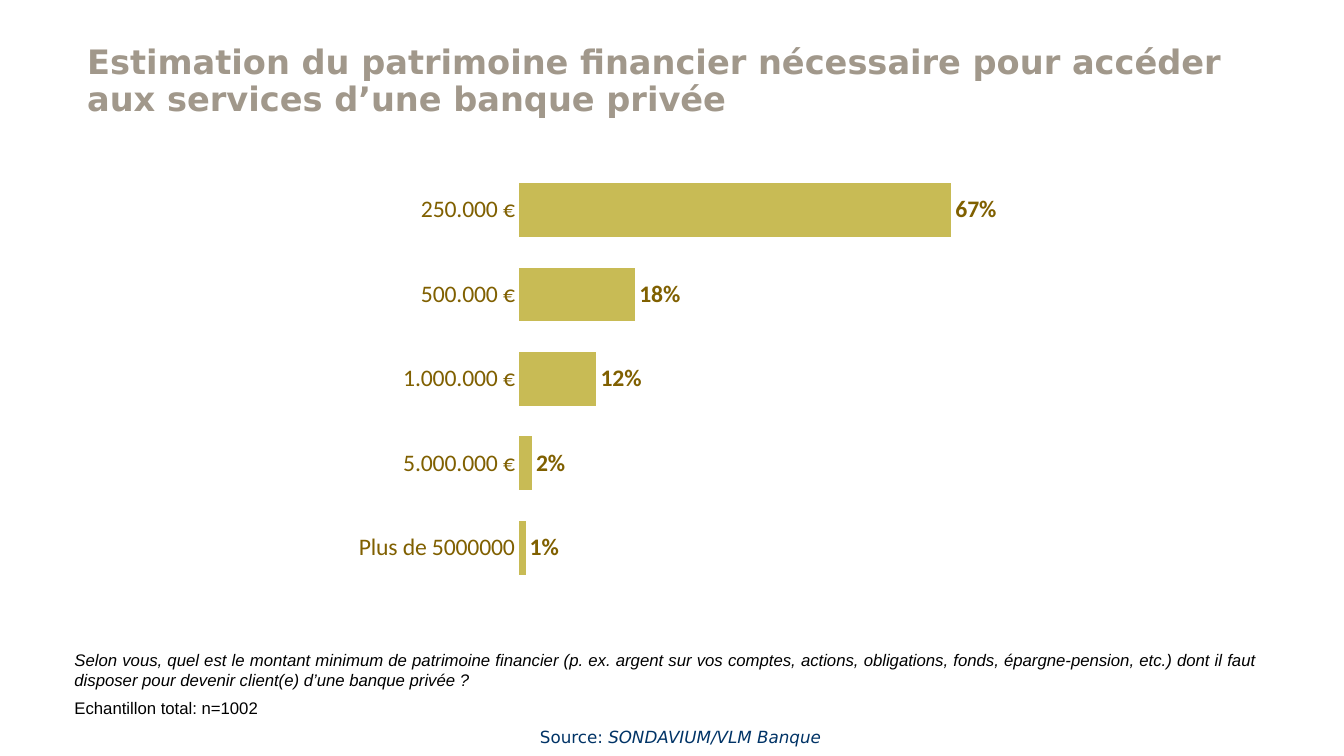
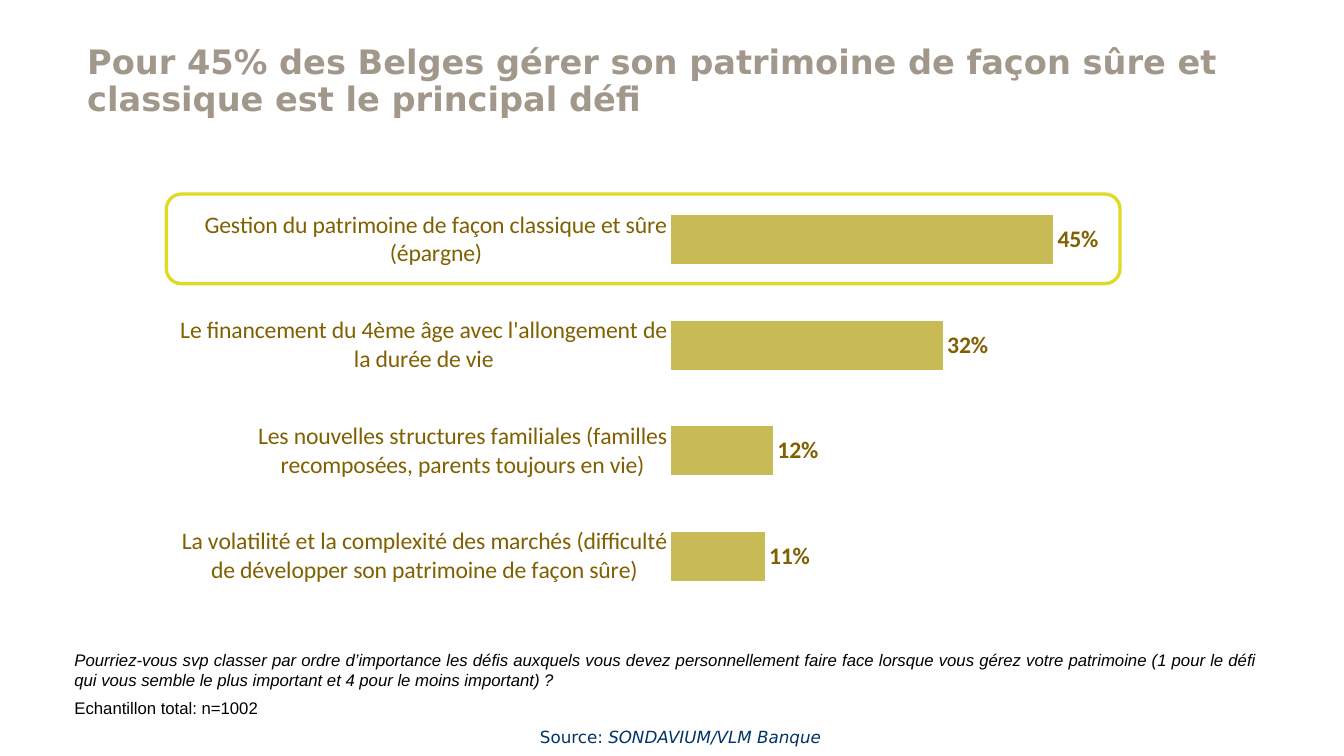
from collections import namedtuple

from lxml import etree
from pptx import Presentation
from pptx.chart.data import CategoryChartData
from pptx.dml.color import RGBColor
from pptx.enum.chart import XL_CHART_TYPE, XL_LABEL_POSITION, XL_TICK_MARK
from pptx.enum.shapes import MSO_SHAPE
from pptx.enum.text import MSO_ANCHOR, PP_ALIGN
from pptx.oxml.ns import qn
from pptx.util import Inches, Pt

BAR_CLUSTERED = XL_CHART_TYPE.BAR_CLUSTERED
OUTSIDE_END = XL_LABEL_POSITION.OUTSIDE_END
NO_TICK = XL_TICK_MARK.NONE
ROUNDED_RECTANGLE = MSO_SHAPE.ROUNDED_RECTANGLE
TOP, MIDDLE = MSO_ANCHOR.TOP, MSO_ANCHOR.MIDDLE
LEFT, CENTER, JUSTIFY = PP_ALIGN.LEFT, PP_ALIGN.CENTER, PP_ALIGN.JUSTIFY

Box = namedtuple("Box", "left top width height")
PAGE = Box(0, 0, Inches(12.6), Inches(7.09))

TITLE_AREA = (5.71, 5.64, 90, 10.44)
QUESTION_AREA = (4.76, 85.19, 89.44, 10.72)
SOURCE_AREA = (24.52, 95.49, 52.22, 4.09)
HIGHLIGHT_AREA = (0, 4.94, 95.72, 19.76)

BAR_COLOR = "C8BB55"
HIGHLIGHT_COLOR = "DEDA26"
TITLE_FONT = {"name": "DejaVu Sans", "size": Pt(22.7), "bold": True, "color": "A1988B"}
QUESTION_FONT = {"name": "Arial", "size": Pt(11.3), "color": "000000"}
SOURCE_FONT = {"name": "DejaVu Sans", "size": Pt(11.3), "color": "003366"}
CHART_FONT = {"name": "Calibri", "size": Pt(10), "color": "000000"}
CATEGORY_FONT = {"name": "Calibri", "size": Pt(16), "bold": False, "color": "806000"}
LABEL_FONT = {**CATEGORY_FONT, "bold": True}

SAMPLE = "Echantillon total: n=1002"
SOURCE = [("Source: ", False), ("SONDAVIUM/VLM Banque", True)]

SLIDES = [
    {
        "title": "Estimation du patrimoine financier nécessaire pour accéder aux services "
                 "d’une banque privée",
        "question": "Selon vous, quel est le montant minimum de patrimoine financier (p. ex. argent "
                    "sur vos comptes, actions, obligations, fonds, épargne-pension, etc.) dont il "
                    "faut disposer pour devenir client(e) d’une banque privée ?",
        "chart_area": (7.86, 20.17, 74.13, 59.94),
        "plot_area": (41.5, 3.4, 51.8, 93.2),
        "answers": {
            "250.000 €": 67,
            "500.000 €": 18,
            "1.000.000 €": 12,
            "5.000.000 €": 2,
            "Plus de 5000000": 1,
        },
        "maximum": 80,
        "gap": 57,
        "overlap": -10,
        "highlight": False,
    },
    {
        "title": "Pour 45% des Belges gérer son patrimoine de façon sûre et classique est le "
                 "principal défi",
        "question": "Pourriez-vous svp classer par ordre d’importance les défis auxquels vous devez "
                    "personnellement faire face lorsque vous gérez votre patrimoine (1 pour le défi "
                    "qui vous semble le plus important et 4 pour le moins important) ?",
        "chart_area": (12.38, 22.71, 74.13, 59.94),
        "plot_area": (50.7, 3.4, 42.6, 93.2),
        "answers": {
            "Gestion du patrimoine de façon classique et sûre (épargne)": 45,
            "Le financement du 4ème âge avec l'allongement de la durée de vie": 32,
            "Les nouvelles structures familiales (familles recomposées, parents toujours en vie)": 12,
            "La volatilité et la complexité des marchés (difficulté de développer son patrimoine "
            "de façon sûre)": 11,
        },
        "maximum": 50,
        "gap": 115,
        "overlap": -20,
        "highlight": True,
    },
]


def rgb(color):
    """Turn a hex string into a colour."""
    return RGBColor.from_string(color)


def share(box, area):
    """Return the part of a box given in percent of its width and height."""
    left, top, width, height = (value / 100 for value in area)
    return Box(
        round(box.left + left * box.width),
        round(box.top + top * box.height),
        round(width * box.width),
        round(height * box.height),
    )


def set_values(target, values):
    """Set attributes from a dict of format values."""
    for name, value in values.items():
        if name == "color":
            target.color.rgb = rgb(value)
        else:
            setattr(target, name, value)


def add_text(slide, box, paragraphs, font, layout, anchor=TOP):
    """Add a text box whose paragraphs are lists of (text, italic) runs."""
    frame = slide.shapes.add_textbox(*box).text_frame
    set_values(frame, {"word_wrap": True, "vertical_anchor": anchor})
    for index, runs in enumerate(paragraphs):
        paragraph = frame.add_paragraph() if index else frame.paragraphs[0]
        set_values(paragraph, layout)
        for text, italic in runs:
            run = paragraph.add_run()
            run.text = text
            set_values(run.font, {**font, "italic": italic})


def set_plot_area(chart, area):
    """Fix the inner plot area in percent of the chart."""
    plot_area = chart.element.find(".//" + qn("c:plotArea"))
    for layout in plot_area.findall(qn("c:layout")):
        plot_area.remove(layout)
    layout = etree.Element(qn("c:layout"))
    manual = etree.SubElement(layout, qn("c:manualLayout"))
    values = {"layoutTarget": "inner", "xMode": "edge", "yMode": "edge"}
    values.update(zip("xywh", (str(round(value / 100, 3)) for value in area)))
    for name, value in values.items():
        etree.SubElement(manual, qn("c:" + name), val=value)
    plot_area.insert(0, layout)


def add_answer_chart(slide, box, content):
    """Add the bar chart of the answers."""
    data = CategoryChartData()
    data.categories = list(content["answers"])
    data.add_series("Series 1", list(content["answers"].values()))
    chart = slide.shapes.add_chart(BAR_CLUSTERED, *box, data).chart
    set_values(chart, {"has_legend": False, "has_title": False})
    set_values(chart.font, CHART_FONT)

    category_axis = chart.category_axis
    set_values(category_axis, {
        "reverse_order": True,
        "major_tick_mark": NO_TICK,
        "minor_tick_mark": NO_TICK,
        "has_major_gridlines": False,
    })
    category_axis.format.line.fill.background()
    set_values(category_axis.tick_labels.font, CATEGORY_FONT)
    set_values(chart.value_axis, {
        "minimum_scale": 0,
        "maximum_scale": content["maximum"],
        "has_major_gridlines": False,
        "visible": False,
    })

    plot = chart.plots[0]
    set_values(plot, {
        "gap_width": content["gap"],
        "overlap": content["overlap"],
        "vary_by_categories": False,
        "has_data_labels": True,
    })
    set_values(plot.data_labels, {
        "show_value": True,
        "number_format": "0\\%",
        "number_format_is_linked": False,
        "position": OUTSIDE_END,
    })
    set_values(plot.data_labels.font, LABEL_FONT)
    fill = plot.series[0].format.fill
    fill.solid()
    fill.fore_color.rgb = rgb(BAR_COLOR)
    set_plot_area(chart, content["plot_area"])


def add_highlight(slide, box):
    """Outline the leading answer."""
    outline = slide.shapes.add_shape(ROUNDED_RECTANGLE, *box)
    outline.shadow.inherit = False
    outline.fill.background()
    set_values(outline.line, {"color": HIGHLIGHT_COLOR, "width": Pt(2.25)})


def add_survey_slide(presentation, content):
    """Add a slide with a title, a chart, the survey question and its source."""
    slide = presentation.slides.add_slide(presentation.slide_layouts[6])
    add_text(slide, share(PAGE, SOURCE_AREA), [SOURCE], SOURCE_FONT, {"alignment": CENTER})
    add_text(slide, share(PAGE, TITLE_AREA), [[(content["title"], False)]], TITLE_FONT,
             {"alignment": LEFT, "line_spacing": 0.9}, MIDDLE)
    add_text(slide, share(PAGE, QUESTION_AREA), [[(content["question"], True)], [(SAMPLE, False)]],
             QUESTION_FONT, {"alignment": JUSTIFY, "space_after": Pt(5.7)})
    chart_box = share(PAGE, content["chart_area"])
    add_answer_chart(slide, chart_box, content)
    if content["highlight"]:
        add_highlight(slide, share(chart_box, HIGHLIGHT_AREA))


def main():
    """Build and save the presentation."""
    presentation = Presentation()
    set_values(presentation, {"slide_width": PAGE.width, "slide_height": PAGE.height})
    for content in SLIDES:
        add_survey_slide(presentation, content)
    presentation.save("out.pptx")


if __name__ == "__main__":
    main()
